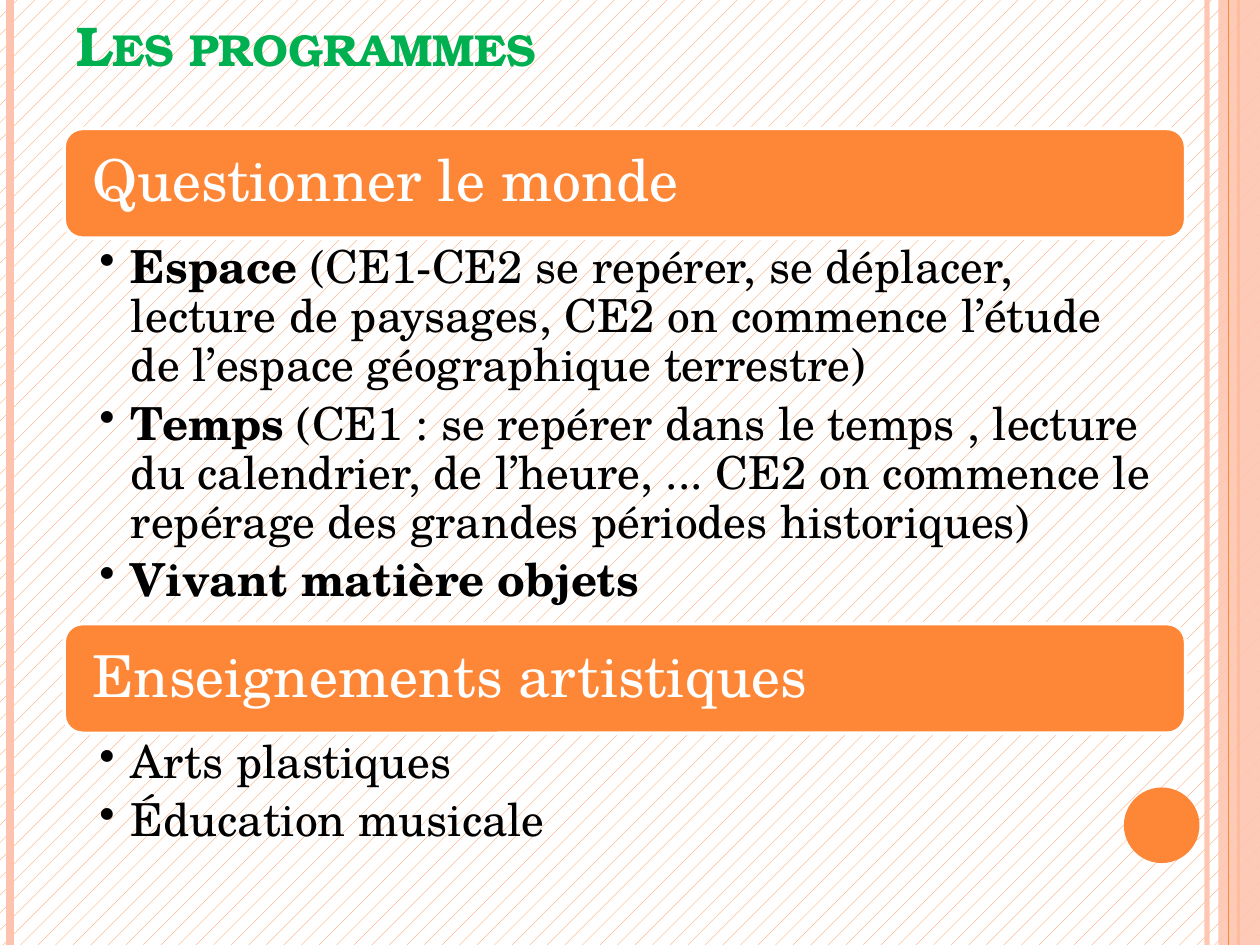
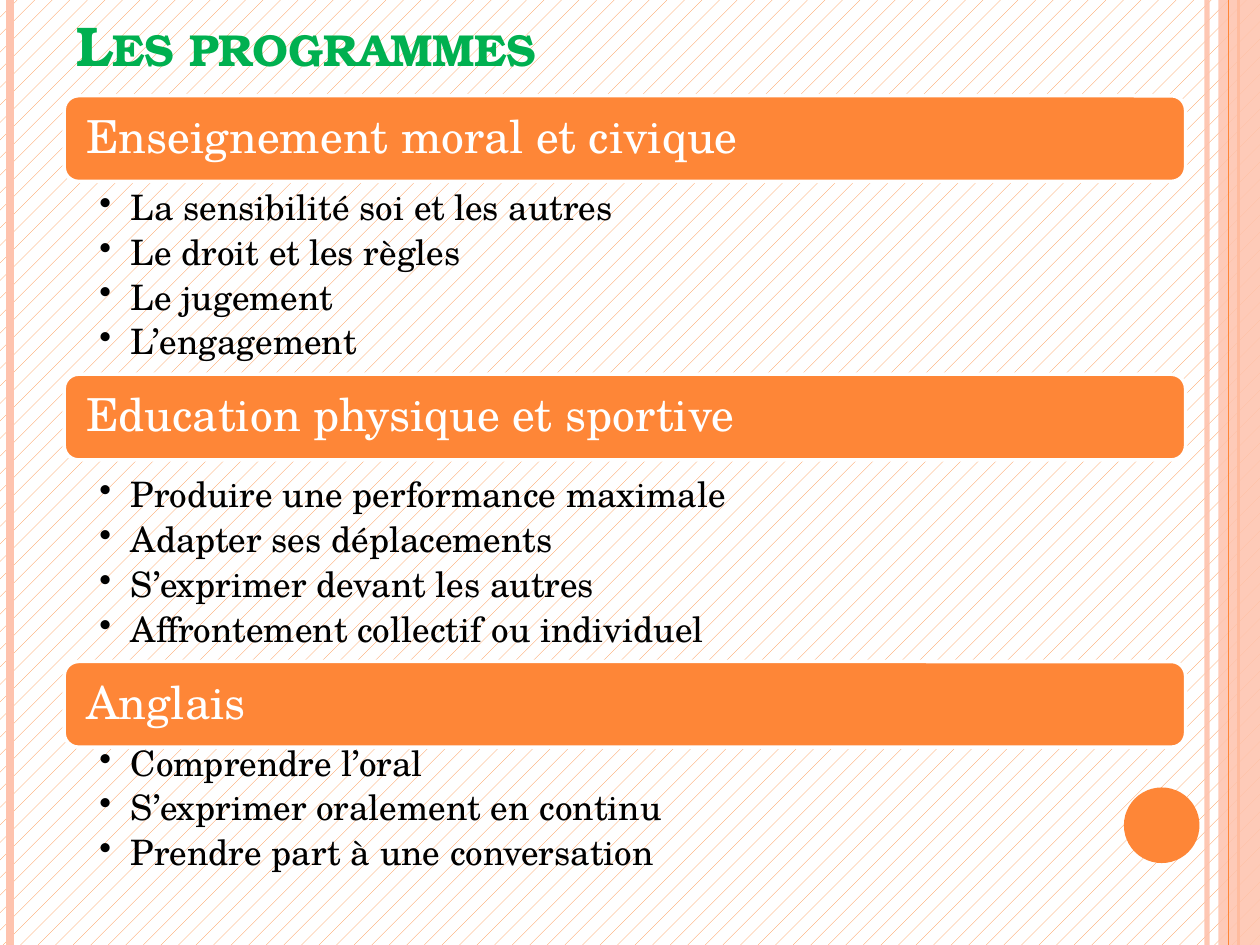
import dataclasses
import pptx
import pptx.dml.color
import pptx.enum.dml
import pptx.enum.shapes
import pptx.enum.text
import pptx.oxml
import pptx.oxml.ns
import pptx.util

COLUMNS, ROWS = 100, 75
CELL = pptx.util.Inches(0.1)
SHAPE = pptx.enum.shapes.MSO_SHAPE
ANCHOR = pptx.enum.text.MSO_ANCHOR


@dataclasses.dataclass(frozen=True)
class Theme:
    """Colours, fonts and title size of the deck."""
    orange: str = "FE8637"
    peach: str = "FEC3AE"
    green: str = "00B050"
    white: str = "FFFFFF"
    black: str = "000000"
    title_font: str = "TeX Gyre Bonum"
    body_font: str = "TeX Gyre Schola"
    title_size: int = 32


@dataclasses.dataclass(frozen=True)
class Scale:
    """Type sizes in points and bar lengths in grid cells for one density."""
    heading: int
    bullet: int
    bar: float
    bar_inset: float
    body_right: float
    body_inset: float


@dataclasses.dataclass(frozen=True)
class Section:
    """A heading and its bullets, with rows for its top, gap and body."""
    top: float
    gap: float
    body: float
    heading: str
    bullets: tuple


T = Theme()
LARGE = Scale(33, 26, 8.7, 1.8, 2.6, 0.5)
SMALL = Scale(26, 20, 6.8, 1.4, 2, 0.4)
CONTENT = (5.1, 89)

PROGRAMMES = (
    (LARGE, (
        Section(10.2, 0, 30.6, "Questionner le monde", (
            ("Espace", " (CE1-CE2 se repérer, se déplacer, lecture de paysages, "
             "CE2 on commence l’étude de l’espace géographique terrestre)"),
            ("Temps", " (CE1 : se repérer dans le temps , lecture du calendrier, "
             "de l’heure, ... CE2 on commence le repérage des grandes périodes "
             "historiques)"),
            ("Vivant matière objets", ""))),
        Section(49.5, 0, 9.7, "Enseignements artistiques", (
            ("", "Arts plastiques"),
            ("", "Éducation musicale"))))),
    (SMALL, (
        Section(7.6, 0.3, 15, "Enseignement moral et civique", (
            ("", "La sensibilité soi et les autres"),
            ("", "Le droit et les règles"),
            ("", "Le jugement"),
            ("", "L’engagement"))),
        Section(29.7, 1, 15, "Education physique et sportive", (
            ("", "Produire une performance maximale"),
            ("", "Adapter ses déplacements"),
            ("", "S’exprimer devant les autres"),
            ("", "Affrontement collectif ou individuel"))),
        Section(52.5, -0.5, 11.2, "Anglais", (
            ("", "Comprendre l’oral"),
            ("", "S’exprimer oralement en continu"),
            ("", "Prendre part à une conversation"))))),
)


def cells(*counts):
    """Turn counts of grid cells into lengths."""
    return [round(n * CELL) for n in counts]


def rgb(colour):
    """Return the colour object of a hex string."""
    return pptx.dml.color.RGBColor.from_string(colour)


def set_opacity(element, percent):
    """Make the first solid colour under the element partly transparent."""
    colour = element.find(".//" + pptx.oxml.ns.qn("a:srgbClr"))
    alpha = pptx.oxml.parse_xml(
        f'<a:alpha {pptx.oxml.ns.nsdecls("a")} val="{percent * 1000}"/>')
    colour.append(alpha)


def add_rule(s, column, colour, width, opacity=100):
    """Draw a vertical line over the full height of the slide."""
    x, bottom = cells(column, ROWS)
    line = s.shapes.add_connector(
        pptx.enum.shapes.MSO_CONNECTOR.STRAIGHT, x, 0, x, bottom)
    line.line.color.rgb = rgb(colour)
    line.line.width = pptx.util.Pt(width)
    line._element.spPr.append(
        pptx.oxml.parse_xml(f'<a:effectLst {pptx.oxml.ns.nsdecls("a")}/>'))
    set_opacity(line._element.spPr, opacity)


def add_block(s, preset, box, colour):
    """Draw a filled shape without outline or shadow."""
    sp = s.shapes.add_shape(preset, *cells(*box))
    sp.shadow.inherit = False
    sp.fill.solid()
    sp.fill.fore_color.rgb = rgb(colour)
    sp.line.fill.background()
    return sp


def setup_text(sp, anchor, left=1, top=0.5, right=1, bottom=0.5):
    """Set wrapping, anchor and insets, and return the text frame."""
    tf = sp.text_frame
    tf.word_wrap = True
    tf.vertical_anchor = anchor
    tf.margin_left, tf.margin_top, tf.margin_right, tf.margin_bottom = cells(
        left, top, right, bottom)
    return tf


def add_run(p, text, font, size, colour, bold=False):
    """Append a formatted run to the paragraph."""
    r = p.add_run()
    r.text = text
    r.font.name = font
    r.font.size = pptx.util.Pt(size)
    r.font.color.rgb = rgb(colour)
    r.font.bold = bold
    return r


def add_decor(s):
    """Draw the patterned background, side bands and disc."""
    fill = s.background.fill
    fill.patterned()
    fill.pattern = pptx.enum.dml.MSO_PATTERN.PERCENT_5
    fill.fore_color.rgb = rgb(T.orange)
    fill.back_color.rgb = rgb(T.white)
    add_rule(s, 95.8, T.peach, 3, 93)
    add_rule(s, 0.8, T.peach, 4.5)
    add_rule(s, 98.3, T.orange, 1.5)
    band = add_block(s, SHAPE.RECTANGLE, (96.7, 0, 3.3, ROWS), T.peach)
    set_opacity(band._element.spPr, 87)
    add_rule(s, 97.5, T.orange, 0.75)
    add_block(s, SHAPE.OVAL, (89.2, 62.5, 6, 6), T.orange)


def add_title(s, box, text):
    """Write the small-caps slide title."""
    tf = setup_text(s.shapes.add_textbox(*cells(*box)), ANCHOR.BOTTOM)
    r = add_run(tf.paragraphs[0], text, T.title_font, T.title_size, T.green, True)
    r.font._element.set("cap", "small")


def add_heading(s, box, text, scale):
    """Draw a rounded bar carrying a section heading."""
    sp = add_block(s, SHAPE.ROUNDED_RECTANGLE, box, T.orange)
    sp.line.color.rgb = rgb(T.white)
    sp.line.width = pptx.util.Pt(2)
    inset = scale.bar_inset
    tf = setup_text(sp, ANCHOR.MIDDLE, inset, inset, inset, inset)
    p = tf.paragraphs[0]
    p.alignment = pptx.enum.text.PP_ALIGN.LEFT
    p.line_spacing = 0.9
    add_run(p, text, T.body_font, scale.heading, T.white)


def add_bullets(s, box, bullets, scale):
    """Write bullets, each with an optional bold lead."""
    inset = scale.body_inset
    tf = setup_text(s.shapes.add_textbox(*cells(*box)), ANCHOR.TOP,
                    2.8, inset, scale.body_right, inset)
    indent, = cells(2.5)
    for i, (lead, rest) in enumerate(bullets):
        p = tf.add_paragraph() if i else tf.paragraphs[0]
        p.line_spacing = 0.9
        p.space_after = pptx.util.Pt(0.2 * scale.bullet)
        pPr = p._p.get_or_add_pPr()
        pPr.set("marL", str(indent))
        pPr.set("indent", str(-indent))
        pPr.append(pptx.oxml.parse_xml(
            f'<a:buChar {pptx.oxml.ns.nsdecls("a")} char="•"/>'))
        for text, bold in ((lead, True), (rest, False)):
            if text:
                add_run(p, text, T.body_font, scale.bullet, T.black, bold)


def add_section(s, section, scale):
    """Place a heading bar and the bullets below it."""
    left, width = CONTENT
    body_top = section.top + scale.bar + section.gap
    add_heading(s, (left, section.top, width, scale.bar), section.heading, scale)
    add_bullets(s, (left, body_top, width, section.body), section.bullets, scale)


def add_programme(prs, scale, sections):
    """Build one slide of the programmes."""
    s = prs.slides.add_slide(prs.slide_layouts[6])
    add_decor(s)
    add_title(s, (5.1, 2.1, 81.7, 4.6), "Les programmes")
    for section in sections:
        add_section(s, section, scale)


def main():
    """Build and save the deck."""
    prs = pptx.Presentation()
    prs.slide_width, prs.slide_height = cells(COLUMNS, ROWS)
    for scale, sections in PROGRAMMES:
        add_programme(prs, scale, sections)
    prs.save("out.pptx")


if __name__ == "__main__":
    main()
